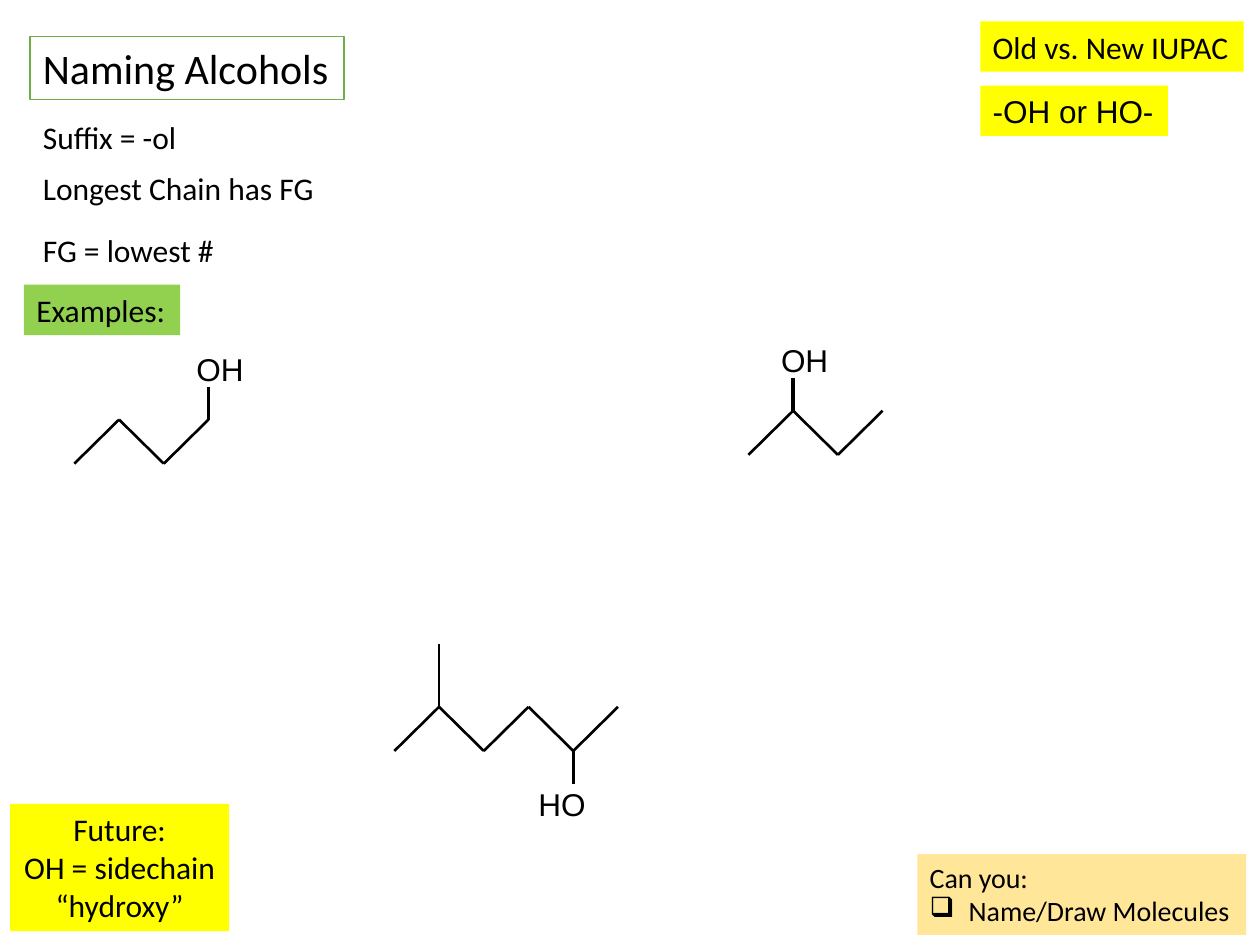
from dataclasses import dataclass

from lxml import etree
from pptx import Presentation
from pptx.dml.color import RGBColor
from pptx.enum.shapes import MSO_CONNECTOR, MSO_SHAPE
from pptx.enum.text import MSO_ANCHOR, MSO_AUTO_SIZE, PP_ALIGN
from pptx.oxml.ns import qn
from pptx.util import Inches, Pt

STRAIGHT = MSO_CONNECTOR.STRAIGHT
RECTANGLE = MSO_SHAPE.RECTANGLE
TOP = MSO_ANCHOR.TOP
FIT_SHAPE, NO_FIT = MSO_AUTO_SIZE.SHAPE_TO_FIT_TEXT, MSO_AUTO_SIZE.NONE
LEFT, CENTER = PP_ALIGN.LEFT, PP_ALIGN.CENTER

WIDTH, HEIGHT = Inches(10), Inches(7.5)
COLUMNS, ROWS = 100, 75  # square cells

# Molecule geometry, in cells
ZIG_X, ZIG_Y = 3.55, 3.5
HYDROXYL_BOND, METHYL_BOND = 2.6, 5
LABEL_WIDTH, LABEL_HEIGHT = 5.8, 4


@dataclass(frozen=True)
class Theme:
    ink: str = "000000"
    paper: str = "FFFFFF"
    title_line: str = "70AD47"
    note: str = "FFFF00"
    heading: str = "92D050"
    checklist: str = "FFE699"
    font: str = "Calibri"
    chemistry_font: str = "Arial"
    title_size: int = 24
    text_size: int = 18
    checklist_size: int = 16
    bond: float = 1.5
    hydroxyl_bond: float = 2


THEME = Theme()


def color(value):
    return RGBColor.from_string(value)


def across(columns):
    return round(WIDTH * columns / COLUMNS)


def down(rows):
    return round(HEIGHT * rows / ROWS)


def place(shape, left, top, width, height):
    shape.left, shape.top = across(left), down(top)
    shape.width, shape.height = across(width), down(height)


def write(shape, lines, size=THEME.text_size, font=THEME.font,
          align=LEFT, wrap=False, fit=FIT_SHAPE):
    frame = shape.text_frame
    frame.word_wrap = wrap
    frame.auto_size = fit
    frame.vertical_anchor = TOP
    for index, line in enumerate(lines):
        paragraph = frame.paragraphs[0] if index == 0 else frame.add_paragraph()
        paragraph.alignment = align
        run = paragraph.add_run()
        run.text = line
        run.font.size = Pt(size)
        run.font.name = font
        run.font.color.rgb = color(THEME.ink)
    return frame.paragraphs


def set_bullet(paragraph, character=None, indent=0.0):
    properties = paragraph._p.get_or_add_pPr()
    properties.set("marL", str(Inches(indent)))
    properties.set("indent", str(-Inches(indent)))
    if character:
        etree.SubElement(properties, qn("a:buChar")).set("char", character)
    else:
        etree.SubElement(properties, qn("a:buNone"))


def add_title(slide, text):
    title = slide.shapes.title
    place(title, 2.4, 2.9, 24.9, 5)
    title.fill.solid()
    title.fill.fore_color.rgb = color(THEME.paper)
    title.line.color.rgb = color(THEME.title_line)
    title.line.width = Pt(1)
    write(title, [text], THEME.title_size, fit=NO_FIT)


def add_rules(slide, rules):
    """Fill the body placeholder from (text, points of space before) pairs."""
    body = slide.placeholders[1]
    place(body, 2.4, 8.9, 25, 13)
    paragraphs = write(body, [text for text, _ in rules], wrap=True, fit=NO_FIT)
    for paragraph, (_, space) in zip(paragraphs, rules):
        paragraph.space_before = Pt(space)
        set_bullet(paragraph)


def add_box(slide, area, fill, lines, **style):
    box = slide.shapes.add_shape(RECTANGLE, 0, 0, 0, 0)
    place(box, *area)
    box.shadow.inherit = False
    box.fill.solid()
    box.fill.fore_color.rgb = color(fill)
    box.line.fill.background()
    return write(box, lines, **style)


def add_bond(group, start, end, weight=THEME.bond):
    bond = group.shapes.add_connector(
        STRAIGHT, across(start[0]), down(start[1]), across(end[0]), down(end[1]))
    bond.line.color.rgb = color(THEME.ink)
    bond.line.width = Pt(weight)
    etree.SubElement(bond._element.spPr, qn("a:effectLst"))


def add_molecule(slide, left, bottom, carbons, hydroxyl, methyl=None):
    """Draw a zigzag chain starting low; hydroxyl and methyl are carbon indexes."""
    group = slide.shapes.add_group_shape()
    chain = [(left + i * ZIG_X, bottom - i % 2 * ZIG_Y) for i in range(carbons)]
    for start, end in zip(chain, chain[1:]):
        add_bond(group, start, end)
    if methyl is not None:
        x, y = chain[methyl]
        add_bond(group, (x, y - METHYL_BOND), (x, y))

    x, y = chain[hydroxyl]
    points_up = hydroxyl % 2 == 1
    bond_end = y - HYDROXYL_BOND if points_up else y + HYDROXYL_BOND
    add_bond(group, (x, y), (x, bond_end), THEME.hydroxyl_bond)
    if points_up:
        text, label_left, label_top = "OH", x - 1.95, bond_end - 3.4
    else:
        text, label_left, label_top = "HO", x - 3.75, bond_end - 0.4
    label = group.shapes.add_textbox(
        across(label_left), down(label_top), across(LABEL_WIDTH), down(LABEL_HEIGHT))
    write(label, [text], font=THEME.chemistry_font)


def main():
    presentation = Presentation()
    presentation.slide_width, presentation.slide_height = WIDTH, HEIGHT
    slide = presentation.slides.add_slide(presentation.slide_layouts[1])

    add_title(slide, "Naming Alcohols")
    add_rules(slide, [("Suffix = -ol", 0),
                      ("Longest Chain has FG", 7),
                      ("FG = lowest #", 14)])

    add_box(slide, (77.8, 1.7, 20.9, 4), THEME.note, ["Old vs. New IUPAC"])
    add_box(slide, (77.8, 6.8, 14.9, 4), THEME.note, ["-OH or HO-"],
            font=THEME.chemistry_font)
    add_box(slide, (1.9, 22.6, 12.4, 4), THEME.heading, ["Examples:"])

    add_molecule(slide, 5.9, 36.8, carbons=4, hydroxyl=3)
    add_molecule(slide, 59.4, 36.1, carbons=4, hydroxyl=1)
    add_molecule(slide, 31.3, 59.6, carbons=6, hydroxyl=4, methyl=1)

    add_box(slide, (0.8, 63.8, 17.4, 10.1), THEME.note,
            ["Future:", "OH = sidechain", "“hydroxy”"], align=CENTER)
    checklist = add_box(slide, (72.8, 67.8, 26.1, 6.4), THEME.checklist,
                        ["Can you:", "Name/Draw Molecules"],
                        size=THEME.checklist_size, wrap=True)
    set_bullet(checklist[1], "❑", 0.31)

    presentation.save("out.pptx")


if __name__ == "__main__":
    main()
